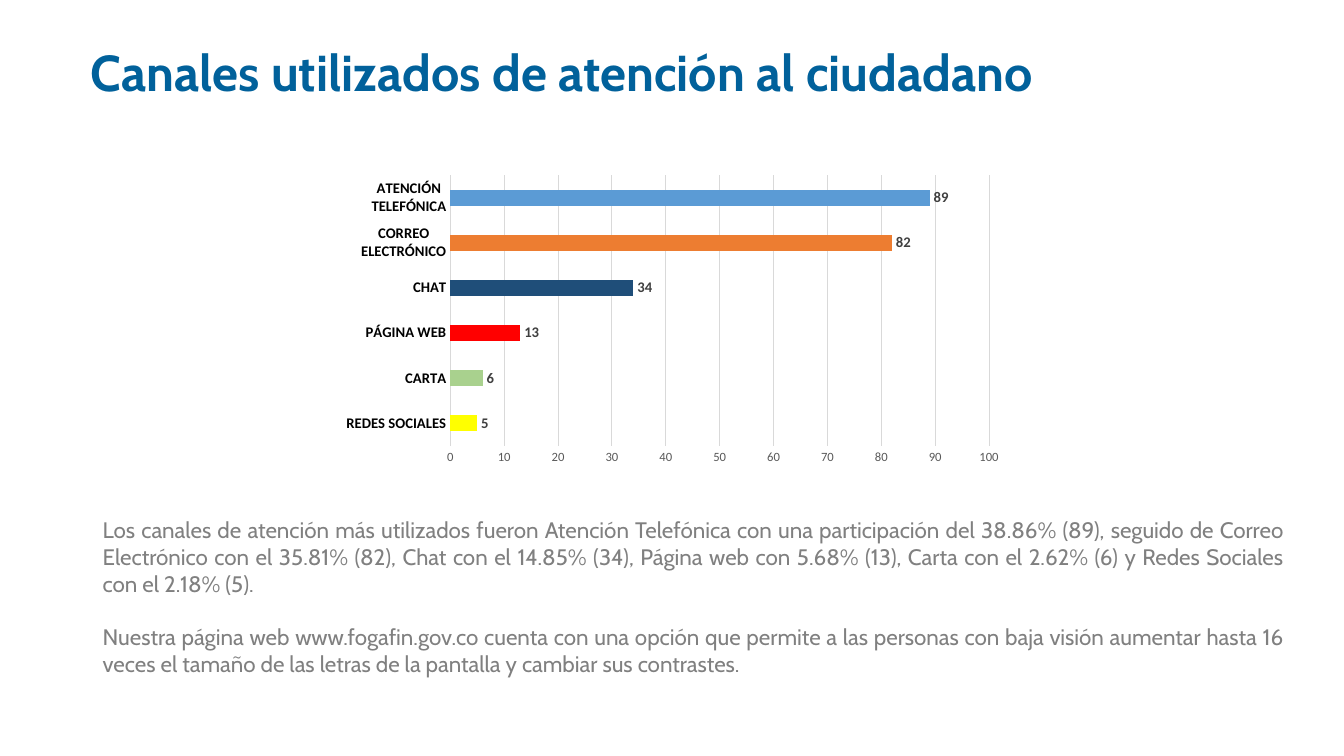
"""Build the slide on the channels used for citizen service."""
from dataclasses import dataclass

from pptx import Presentation
from pptx.chart.data import CategoryChartData
from pptx.dml.color import RGBColor
from pptx.enum.chart import XL_CHART_TYPE as ChartType, XL_LABEL_POSITION as LabelPosition
from pptx.enum.chart import XL_TICK_MARK as TickMark
from pptx.enum.text import MSO_ANCHOR as Anchor, MSO_AUTO_SIZE as AutoSize, PP_ALIGN as Align
from pptx.util import Inches, Pt

COLORS = {
    "title": "01619B", "body": "808080", "black": "000000", "label": "404040",
    "scale": "595959", "grid": "D9D9D9", "yellow": "FFFF00", "green": "A9D18E",
    "red": "FF0000", "navy": "1F4E79", "orange": "ED7D31", "blue": "5B9BD5",
}


@dataclass(frozen=True)
class Channel:
    name: str
    count: int
    color: str


CHANNELS = [
    Channel("REDES SOCIALES", 5, "yellow"),
    Channel("CARTA", 6, "green"),
    Channel("PÁGINA WEB", 13, "red"),
    Channel("CHAT", 34, "navy"),
    Channel("CORREO ELECTRÓNICO", 82, "orange"),
    Channel("ATENCIÓN TELEFÓNICA", 89, "blue"),
]

PARAGRAPHS = [
    "Los canales de atención más utilizados fueron Atención Telefónica con una participación "
    "del 38.86% (89), seguido de Correo Electrónico con el 35.81% (82), Chat con el 14.85% (34), "
    "Página web con 5.68% (13), Carta con el 2.62% (6) y Redes Sociales con el 2.18% (5).",
    "Nuestra página web www.fogafin.gov.co cuenta con una opción que permite a las personas con "
    "baja visión aumentar hasta 16 veces el tamaño de las letras de la pantalla y cambiar sus "
    "contrastes.",
]


def rgb(name: str) -> RGBColor:
    return RGBColor.from_string(COLORS[name])


def style_font(font, face: str, size: float, color: str, bold: bool = False) -> None:
    font.name, font.size, font.bold = face, Pt(size), bold
    font.color.rgb = rgb(color)


def style_line(line, color: str) -> None:
    line.color.rgb = rgb(color)
    line.width = Pt(0.75)


def add_title(page) -> None:
    title = page.shapes.title
    title.left, title.top = Inches(0.8), Inches(0.2)
    title.width, title.height = Inches(10.59), Inches(1.09)
    frame = title.text_frame
    frame.text = "Canales utilizados de atención al ciudadano"
    frame.auto_size = AutoSize.NONE
    frame.vertical_anchor = Anchor.MIDDLE
    para = frame.paragraphs[0]
    para.alignment, para.line_spacing = Align.LEFT, 0.9
    style_font(para.runs[0].font, "Cabin", 36, "title", True)


def add_channel_chart(page) -> None:
    data = CategoryChartData()
    data.categories = [channel.name for channel in CHANNELS]
    data.add_series("Series 1", [channel.count for channel in CHANNELS])
    chart = page.shapes.add_chart(
        ChartType.BAR_CLUSTERED, Inches(3.3), Inches(1.68), Inches(6.74), Inches(2.99), data
    ).chart
    chart.has_legend = chart.has_title = False
    style_font(chart.font, "Calibri", 10, "black")

    plot = chart.plots[0]
    plot.gap_width, plot.vary_by_categories = 182, False
    series = plot.series[0]
    series.format.fill.solid()
    series.format.fill.fore_color.rgb = rgb("blue")
    for index, channel in enumerate(CHANNELS):
        fill = series.points[index].format.fill
        fill.solid()
        fill.fore_color.rgb = rgb(channel.color)
    labels = series.data_labels
    labels.show_value, labels.position = True, LabelPosition.OUTSIDE_END
    style_font(labels.font, "Calibri", 10.5, "label", True)

    names, scale = chart.category_axis, chart.value_axis
    for axis in (names, scale):
        axis.major_tick_mark = axis.minor_tick_mark = TickMark.NONE
    style_font(names.tick_labels.font, "Calibri", 10.5, "black", True)
    style_line(names.format.line, "grid")
    style_font(scale.tick_labels.font, "Calibri", 9, "scale")
    scale.format.line.fill.background()
    scale.minimum_scale, scale.maximum_scale, scale.major_unit = 0, 100, 10
    scale.has_major_gridlines = True
    style_line(scale.major_gridlines.format.line, "grid")


def add_summary(page) -> None:
    box = page.shapes.add_textbox(Inches(0.92), Inches(5.07), Inches(11.92), Inches(1.72))
    frame = box.text_frame
    frame.word_wrap = True
    frame.auto_size = AutoSize.SHAPE_TO_FIT_TEXT
    frame.text = "\n".join(PARAGRAPHS)
    for index, para in enumerate(frame.paragraphs):
        para.alignment = Align.JUSTIFY
        para.space_before = Pt(19 if index else 0)
        style_font(para.runs[0].font, "Cabin", 16, "body")


def main() -> None:
    deck = Presentation()
    deck.slide_width, deck.slide_height = Inches(13.33), Inches(7.5)
    page = deck.slides.add_slide(deck.slide_layouts.get_by_name("Title Only"))
    add_title(page)
    add_summary(page)
    add_channel_chart(page)
    deck.save("out.pptx")


if __name__ == "__main__":
    main()
